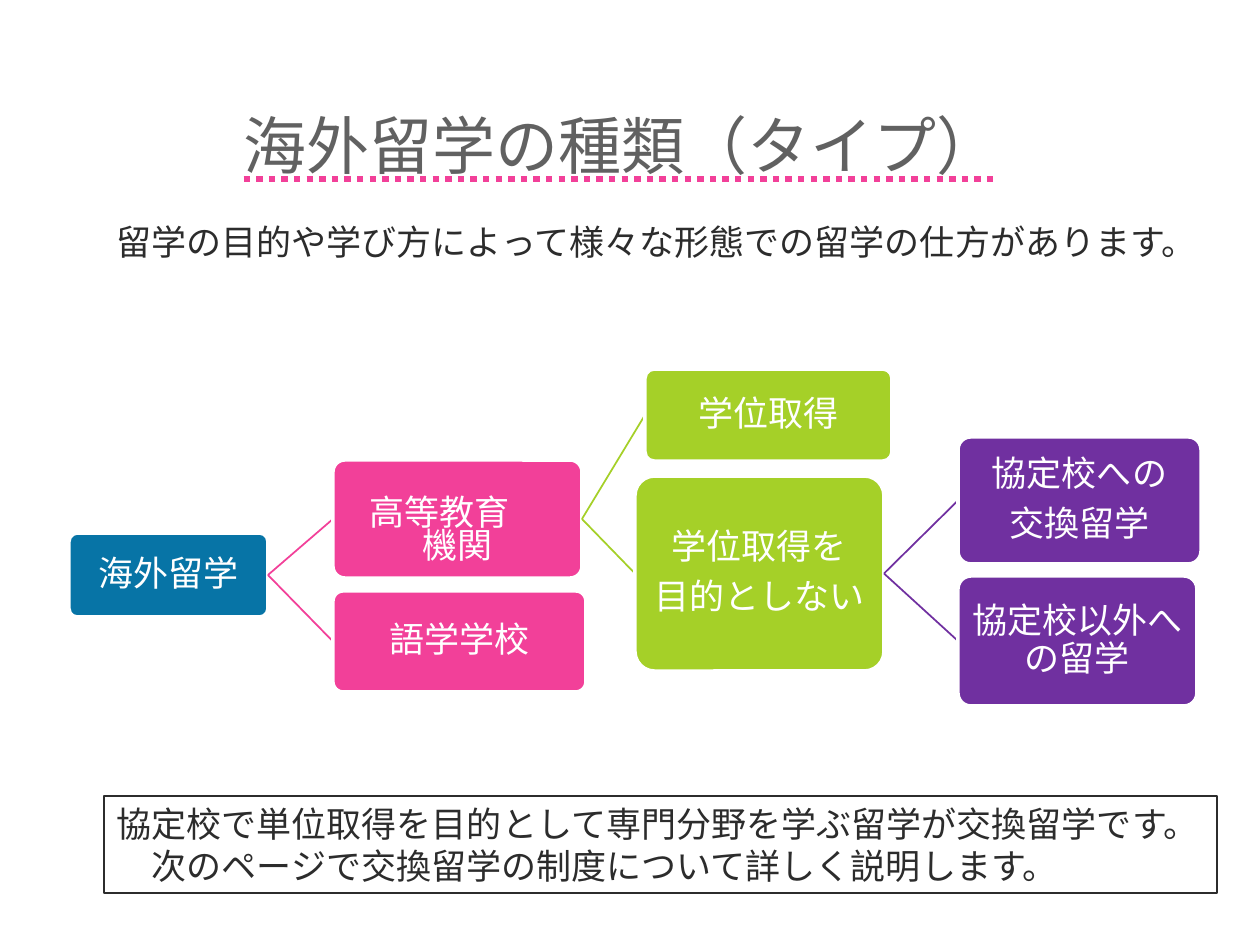
from lxml import etree
from pptx import Presentation
from pptx.dml.color import RGBColor
from pptx.enum.shapes import MSO_CONNECTOR, MSO_SHAPE
from pptx.enum.text import MSO_ANCHOR, MSO_AUTO_SIZE, MSO_UNDERLINE, PP_ALIGN
from pptx.oxml.ns import qn
from pptx.util import Emu, Pt

ROUND, RECT = MSO_SHAPE.ROUNDED_RECTANGLE, MSO_SHAPE.RECTANGLE
STRAIGHT = MSO_CONNECTOR.STRAIGHT
MIDDLE, TOP = MSO_ANCHOR.MIDDLE, MSO_ANCHOR.TOP
LEFT, CENTER = PP_ALIGN.LEFT, PP_ALIGN.CENTER
FIXED = MSO_AUTO_SIZE.NONE
DOTS = MSO_UNDERLINE.DOTTED_HEAVY_LINE
PX = 914400 / 126
BLUE, PINK, GREEN, PURPLE = "0774A6", "F24099", "A5D028", "7030A0"
WHITE, INK, GRAY = "FFFFFF", "2C2C2C", "616161"


def rgb(code):
    return RGBColor.from_string(code)


def write(shape, lines, size, color, frame, para):
    """Fill a shape with paragraphs, using dicts of format values."""
    text = shape.text_frame
    text.text = "\n".join(lines)
    for name, value in {"word_wrap": True, "auto_size": FIXED, **frame}.items():
        setattr(text, name, value)
    for item in text.paragraphs:
        for name, value in para.items():
            setattr(item, name, value)
        font = item.runs[0].font
        font.name, font.size = "Calibri", Pt(size)
        font.color.rgb = rgb(color)


deck = Presentation()
deck.slide_width, deck.slide_height = Emu(round(1260 * PX)), Emu(round(945 * PX))
slide = deck.slides.add_slide(deck.slide_layouts[5])
shapes = slide.shapes

# Title with a dotted pink underline
title = shapes.title
place = {"left": 231, "top": 102, "width": 799, "height": 96}
for name, value in place.items():
    setattr(title, name, Emu(round(value * PX)))
write(title, ["海外留学の種類（タイプ）"], 36, GRAY,
      {"vertical_anchor": MIDDLE}, {"alignment": LEFT, "line_spacing": 0.85})
font = title.text_frame.paragraphs[0].runs[0].font
font.underline = DOTS
under = etree.Element(qn("a:uFill"))
solid = etree.SubElement(under, qn("a:solidFill"))
etree.SubElement(solid, qn("a:srgbClr"), val=PINK)
font._element.find(qn("a:latin")).addprevious(under)

# Tree of study types: key, parent, box, colour, lines
nodes = [
    ("root", None, (69, 533, 199, 84), BLUE, ["海外留学"]),
    ("higher", "root", (333, 460, 249, 118), PINK, ["高等教育\u3000".replace("\u3000", "　"), "機関"]),
    ("degree", "higher", (645, 369, 247, 92), GREEN, ["学位取得"]),
    ("other", "higher", (635, 476, 249, 195), GREEN, ["学位取得を", "目的としない"]),
    ("partner", "other", (958, 437, 243, 127), PURPLE, ["協定校への", "交換留学"]),
    ("free", "other", (958, 576, 239, 130), PURPLE, ["協定校以外への留学"]),
    ("language", "root", (333, 591, 253, 101), PINK, ["語学学校"]),
]
boxes = {}
for key, parent, area, color, lines in nodes:
    box = shapes.add_shape(ROUND, *(Emu(round(n * PX)) for n in area))
    box.shadow.inherit = False
    box.adjustments[0] = 0.1
    box.fill.solid()
    box.fill.fore_color.rgb = rgb(color)
    box.line.color.rgb = rgb(WHITE)
    box.line.width = Pt(2)
    tight = key == "higher"
    frame = {"margin_" + side: Emu(round(4 * PX))
             for side in ("left", "right", "top", "bottom")}
    frame["vertical_anchor"] = MIDDLE
    if tight:
        frame["margin_top"] = Emu(round(37 * PX))
    write(box, lines, 20, WHITE, frame,
          {"alignment": CENTER, "line_spacing": 0.5 if tight else 0.9,
           "space_after": Pt(7)})
    boxes[key] = box

    # Branch from the parent's right side to this box's left side
    if parent:
        branch = shapes.add_connector(STRAIGHT, 0, 0, 0, 0)
        branch.begin_connect(boxes[parent], 3)
        branch.end_connect(box, 1)
        branch.line.color.rgb = rgb(color)
        branch.line.width = Pt(1)
        etree.SubElement(branch._element.spPr, qn("a:effectLst"))
        box._element.addprevious(branch._element)

# Lead sentence and framed note share left edge and width
notes = [
    (214, 55, None, ["留学の目的や学び方によって様々な形態での留学の仕方があります。"]),
    (796, 97, INK, ["協定校で単位取得を目的として専門分野を学ぶ留学が交換留学です。",
                    "　次のページで交換留学の制度について詳しく説明します。"]),
]
for top, height, edge, lines in notes:
    area = [Emu(round(n * PX)) for n in (104, top, 1113, height)]
    if edge:
        note = shapes.add_shape(RECT, *area)
        note.shadow.inherit = False
        note.fill.solid()
        note.fill.fore_color.rgb = rgb(WHITE)
        note.line.color.rgb = rgb(edge)
        note.line.width = Pt(1)
    else:
        note = shapes.add_textbox(*area)
    write(note, lines, 20, INK, {"vertical_anchor": TOP}, {"alignment": LEFT})

deck.save("out.pptx")
